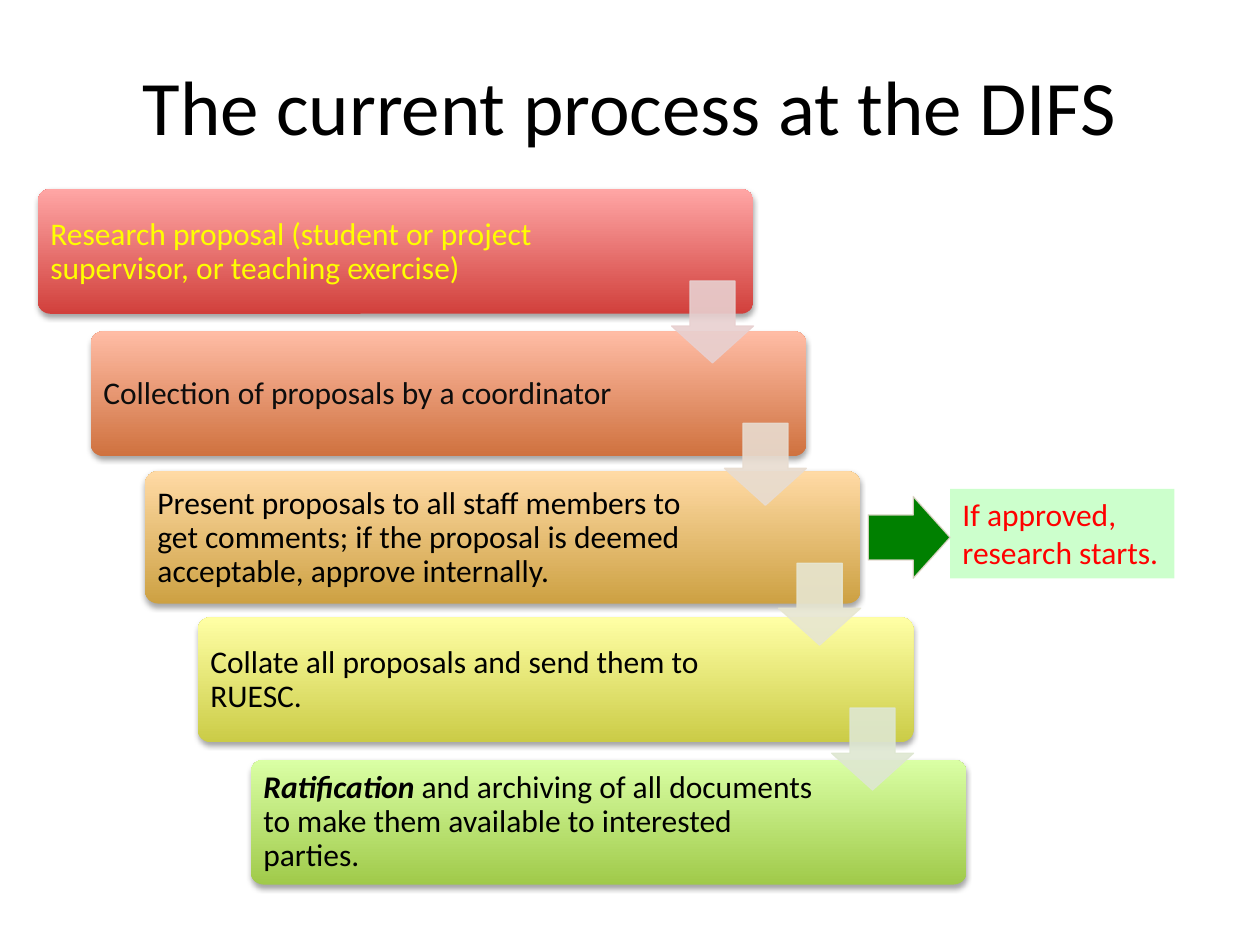
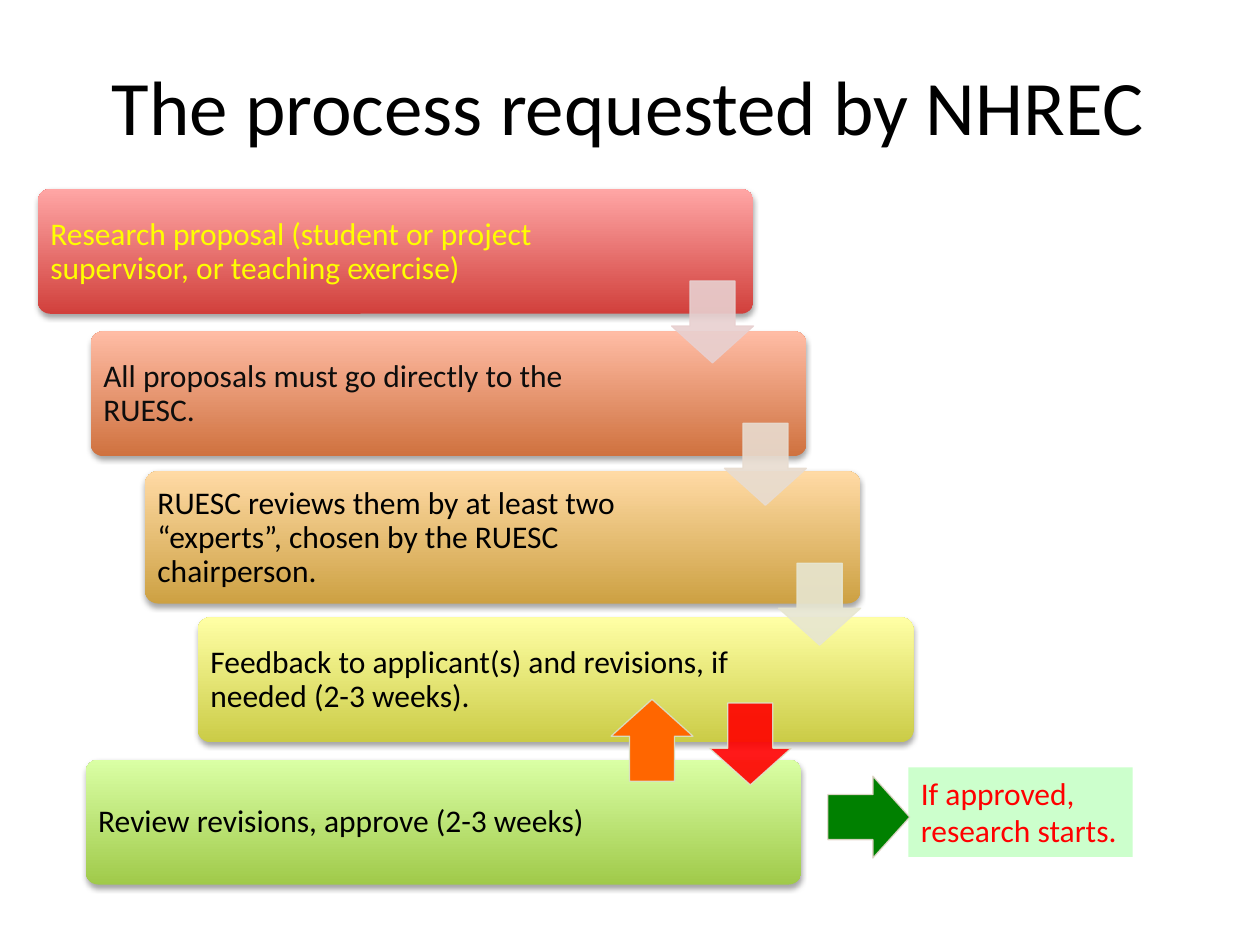
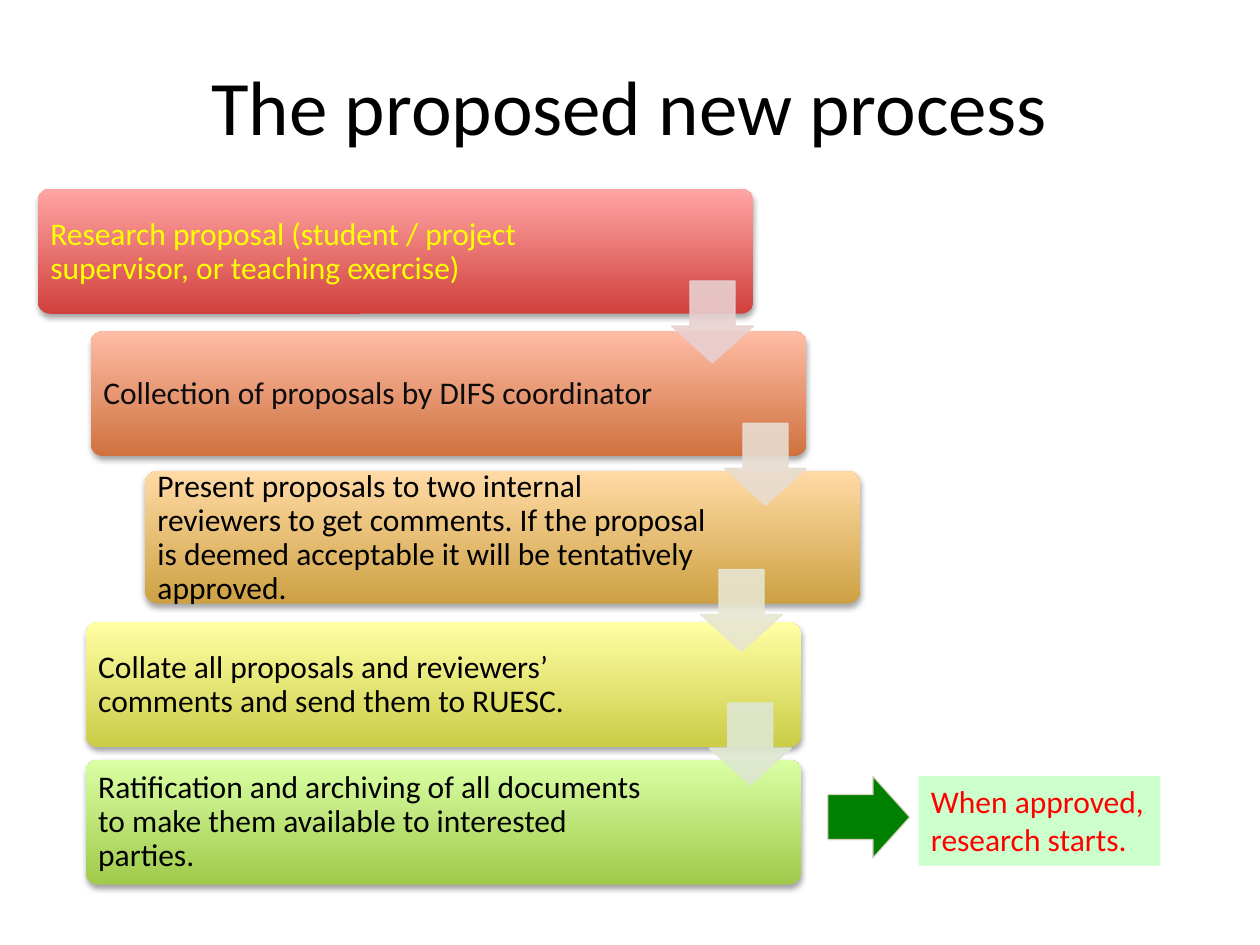
from dataclasses import dataclass

from lxml import etree
from pptx import Presentation
from pptx import util as u
from pptx.dml import color
from pptx.enum import shapes, text
from pptx.oxml import ns


@dataclass(frozen=True)
class Theme:
    font: str = "Calibri"
    head: int = 44
    body: int = 18
    ink: str = "000000"
    note: str = "FF0000"
    mint: str = "CCFFCC"
    go: str = "008000"
    rim: str = "E3D7CB"
    back: str = "FF6600"
    edge: str = "D9E2CC"
    redo: str = "FF0000"
    bands: tuple = (
        ("D1403C", "FFA6A5"),
        ("CF723F", "FFBCA5"),
        ("CDA143", "FFDAA5"),
        ("CBCC47", "FFFFA5"),
        ("A0CA4A", "DAFFA5"),
    )
    inks: tuple = ("FFFF00", "0D0D0D", "000000", "000000", "000000")
    pales: tuple = ("E8D0D0", "E8DCD0", "E7E6D1", "DEE7D1")


T = Theme()
WIDE = 5.68
HIGH = (0.99, 0.99, 1.05, 0.99, 0.99)
LEFTS = [round(0.3 + 0.4225 * i, 2) for i in range(5)]
TOPS = (1.5, 2.63, 3.74, 4.9, 6.03)
SIDE = 0.65
DROPS = [
    (round(x + WIDE - SIDE, 2), y)
    for x, y in zip(LEFTS, (2.23, 3.36, 4.47, 5.62))
]
LOW = (5.63, 5.58)
EXIT = (6.57, 6.16)
STRONG = {"bold": True, "italic": True}


def put(item, vals):
    for key, val in vals.items():
        setattr(item, key, val)


def rgb(code):
    return color.RGBColor.from_string(code)


def box(*nums):
    return [u.Inches(n) for n in nums]


def add(node, tag, **attrs):
    return etree.SubElement(node, ns.qn(tag), attrs)


def write(para, words, size, ink, **marks):
    run = para.add_run()
    run.text = words
    put(run.font, {"name": T.font, "size": u.Pt(size), **marks})
    run.font.color.rgb = rgb(ink)


def shade(shape):
    glow = add(shape._element.spPr.find(ns.qn("a:effectLst")), "a:outerShdw",
               blurRad=str(u.Pt(3.1)), dist=str(u.Pt(1.8)),
               dir="5400000", rotWithShape="0")
    tint = add(glow, "a:srgbClr", val="000000")
    add(tint, "a:alpha", val="35000")


def title(slide, words, x, w):
    head = slide.shapes.title
    put(head, dict(zip(("left", "top", "width", "height"),
                       box(x, 0.21, w, 1.25))))
    put(head.text_frame, {"vertical_anchor": text.MSO_ANCHOR.MIDDLE,
                          "word_wrap": True})
    para = head.text_frame.paragraphs[0]
    para.alignment = text.PP_ALIGN.CENTER
    write(para, words, T.head, T.ink)


def step(slide, x, y, h, band, ink, parts):
    card = slide.shapes.add_shape(
        shapes.MSO_SHAPE.ROUNDED_RECTANGLE, *box(x, y, WIDE, h))
    card.adjustments[0] = 0.1
    card.shadow.inherit = False
    card.line.fill.background()
    card.fill.gradient()
    card.fill.gradient_angle = 90
    for stop, code in zip(card.fill.gradient_stops, band):
        stop.color.rgb = rgb(code)
    shade(card)

    frame = slide.shapes.add_textbox(
        *box(x + 0.03, y + 0.03, 4.54, h - 0.05)).text_frame
    pad = u.Inches(0.07)
    put(frame, {"word_wrap": True,
                "vertical_anchor": text.MSO_ANCHOR.MIDDLE,
                "margin_left": pad, "margin_right": pad,
                "margin_top": pad, "margin_bottom": pad})
    para = frame.paragraphs[0]
    para.line_spacing = 0.9
    for words, marks in parts:
        write(para, words, T.body, ink, **marks)


def arrow(slide, spot, fill, edge, turn=0, clear=False):
    mark = slide.shapes.add_shape(
        shapes.MSO_SHAPE.DOWN_ARROW, *box(*spot, SIDE, SIDE))
    mark.shadow.inherit = False
    mark.rotation = turn
    mark.adjustments[0], mark.adjustments[1] = 0.55, 0.45
    mark.fill.solid()
    mark.fill.fore_color.rgb = rgb(fill)
    mark.line.color.rgb = rgb(edge)
    mark.line.width = u.Pt(0.75)
    props = mark._element.spPr
    tints = list(props.iter(ns.qn("a:srgbClr")))
    for tint in tints if clear else tints[1:]:
        add(tint, "a:alpha", val="90000")


def label(slide, x, y, w, lines):
    tag = slide.shapes.add_shape(
        shapes.MSO_SHAPE.RECTANGLE, *box(x, y, w, 0.71))
    tag.shadow.inherit = False
    tag.fill.solid()
    tag.fill.fore_color.rgb = rgb(T.mint)
    tag.line.fill.background()
    frame = tag.text_frame
    put(frame, {"word_wrap": False,
                "auto_size": text.MSO_AUTO_SIZE.SHAPE_TO_FIT_TEXT,
                "vertical_anchor": text.MSO_ANCHOR.TOP})
    for i, words in enumerate(lines):
        para = frame.add_paragraph() if i else frame.paragraphs[0]
        para.alignment = text.PP_ALIGN.LEFT
        write(para, words, T.body, T.note)


def flow(deck, head, span, steps, note, gate, lefts=LEFTS, tops=TOPS,
         drops=DROPS, fills=T.pales):
    slide = deck.slides.add_slide(deck.slide_layouts[5])
    title(slide, head, *span)
    for row in zip(lefts, tops, HIGH, T.bands, T.inks, steps):
        step(slide, *row)
    for spot, fill, edge in zip(drops, fills, T.pales):
        arrow(slide, spot, fill, edge, clear=True)
    label(slide, *note)
    arrow(slide, gate, T.go, T.rim, turn=270)
    return slide


def plain(*lines):
    return [[(words, {})] for words in lines]


def main():
    deck = Presentation()
    deck.slide_width, deck.slide_height = box(10, 7.5)
    start = "Research proposal (student or project supervisor, or teaching exercise)"
    close = " and archiving of all documents to make them available to interested parties."
    start_note = ("If approved,", "research starts.")

    flow(deck, "The current process at the DIFS", (0.5, 9),
         plain(start,
               "Collection of proposals by a coordinator",
               "Present proposals to all staff members to get comments; if the proposal is deemed acceptable, approve internally.",
               "Collate all proposals and send them to RUESC.")
         + [[("Ratification", STRONG), (close, {})]],
         (7.54, 3.88, 1.78, start_note), (6.89, 3.94))

    slide = flow(
        deck, "The process requested by NHREC", (0.1, 9.77),
        plain(start,
              "All proposals must go directly to the RUESC.",
              "RUESC reviews them by at least two “experts”, chosen by the RUESC chairperson.",
              "Feedback to applicant(s) and revisions, if needed (2-3 weeks).",
              "Review revisions, approve (2-3 weeks)"),
        (7.21, 6.09, 1.78, start_note), EXIT,
        lefts=LEFTS[:4] + [0.68],
        drops=DROPS[:3] + [LOW],
        fills=T.pales[:3] + (T.redo,))
    arrow(slide, (4.85, 5.55), T.back, T.edge, turn=180)

    flow(deck, "The proposed new process", (0.5, 9),
         plain("Research proposal (student / project supervisor, or teaching exercise)",
               "Collection of proposals by DIFS coordinator",
               "Present proposals to two internal reviewers to get comments. If the proposal is deemed acceptable it will be tentatively approved.",
               "Collate all proposals and reviewers’ comments and send them to RUESC.",
               "Ratification" + close),
         (7.29, 6.16, 1.92, ("When approved,", "research starts.")), EXIT,
         lefts=LEFTS[:3] + [0.68, 0.68],
         tops=TOPS[:3] + (4.94, 6.03),
         drops=DROPS[:2] + [(5.56, 4.52), LOW])

    deck.save("out.pptx")


if __name__ == "__main__":
    main()
